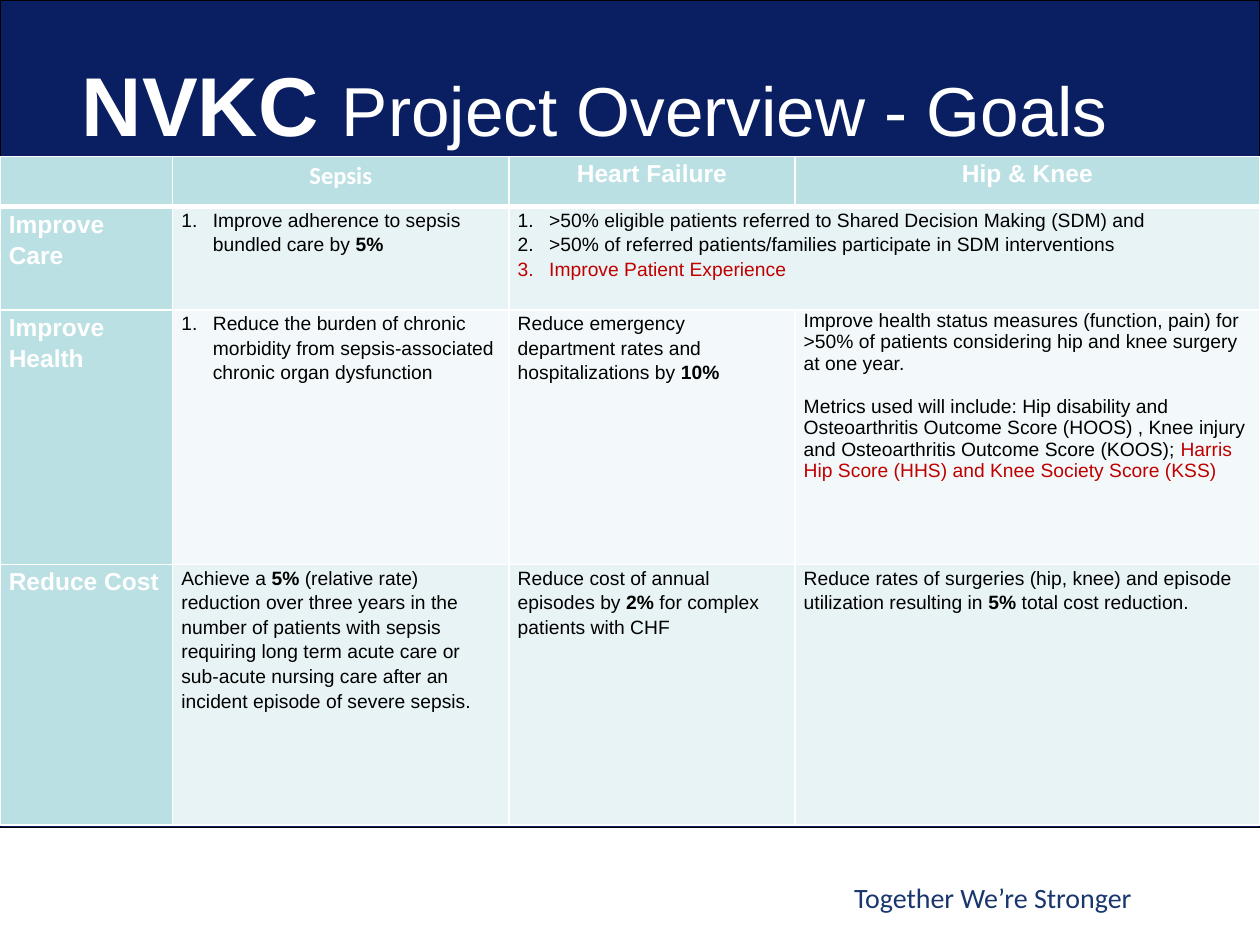
from lxml import etree
from pptx import Presentation
from pptx.dml.color import RGBColor
from pptx.enum.shapes import MSO_SHAPE
from pptx.enum.text import MSO_ANCHOR, MSO_AUTO_SIZE, PP_ALIGN
from pptx.oxml.ns import qn
from pptx.util import Inches, Pt

LEFT, CENTER, RIGHT = PP_ALIGN.LEFT, PP_ALIGN.CENTER, PP_ALIGN.RIGHT
RECTANGLE = MSO_SHAPE.RECTANGLE
MIDDLE, TOP = MSO_ANCHOR.MIDDLE, MSO_ANCHOR.TOP
NO_AUTOFIT = MSO_AUTO_SIZE.NONE
TITLE_ONLY = 5

COLORS = {"navy": "0A1F62", "motto": "19376E", "white": "FFFFFF",
          "black": "000000", "red": "C00000", "heading": "BBE0E3",
          "band": "E7F3F4", "light": "F3F9FA"}

COLUMN_WIDTHS = [1.37, 2.67, 2.27, 3.69]
ROW_HEIGHTS = [0.4, 0.82, 2.02, 2.07]
ROW_FILLS = ["heading", "band", "light", "band"]
TOPICS = ["", "Sepsis", "Heart Failure", "Hip & Knee"]
AIMS = ["Improve Care", "Improve Health", "Reduce Cost"]

# Each goal is a list of paragraphs; *bold* and ^red^ mark runs
GOALS = {
    (1, 1): ["Improve adherence to sepsis bundled care by *5%*"],
    (1, 2): [">50% eligible patients referred to Shared Decision Making (SDM) and",
             ">50% of referred patients/families participate in SDM interventions",
             "^Improve Patient Experience^"],
    (2, 1): ["Reduce the burden of chronic morbidity from sepsis-associated "
             "chronic organ dysfunction"],
    (2, 2): ["Reduce emergency department rates and hospitalizations by *10%*"],
    (2, 3): ["Improve health status measures (function, pain) for >50% of patients "
             "considering hip and knee surgery at one year.",
             "Metrics used will include: Hip disability and Osteoarthritis Outcome "
             "Score (HOOS) , Knee injury and Osteoarthritis Outcome Score (KOOS); "
             "^Harris Hip Score (HHS) and Knee Society Score (KSS)^"],
    (3, 1): ["Achieve a *5%* (relative rate) reduction over three years in the number "
             "of patients with sepsis requiring long term acute care or sub-acute "
             "nursing care after an incident episode of severe sepsis."],
    (3, 2): ["Reduce cost of annual episodes by *2%* for complex patients with CHF"],
    (3, 3): ["Reduce rates of surgeries (hip, knee) and episode utilization "
             "resulting in *5%* total cost reduction."],
}
NUMBERED = {(1, 1), (1, 2), (2, 1)}
SINGLE_SPACED = {(2, 3)}


def rgb(name):
    return RGBColor.from_string(COLORS[name])


class GoalsSlide:
    def __init__(self, presentation):
        self.slide = presentation.slides.add_slide(presentation.slide_layouts[TITLE_ONLY])

    def style(self, paragraph, size, color, bold=False, face="Arial", align=LEFT):
        paragraph.alignment = align
        font = paragraph.font
        font.name, font.size, font.bold = face, Pt(size), bold
        font.color.rgb = rgb(color)

    def backdrop(self, left, top, width, height):
        panel = self.slide.shapes.add_shape(
            RECTANGLE, Inches(left), Inches(top), Inches(width), Inches(height))
        panel.shadow.inherit = False
        panel.fill.solid()
        panel.fill.fore_color.rgb = rgb("navy")
        panel.line.color.rgb = rgb("black")
        panel.line.width = Pt(0.75)

    def title(self, left, top, width, height, parts):
        title = self.slide.shapes.title
        title.left, title.top = Inches(left), Inches(top)
        title.width, title.height = Inches(width), Inches(height)
        frame = title.text_frame
        frame.auto_size, frame.vertical_anchor = NO_AUTOFIT, MIDDLE
        paragraph = frame.paragraphs[0]
        self.style(paragraph, 39.6, "white")
        for text, size, bold in parts:
            run = paragraph.add_run()
            run.text, run.font.size, run.font.bold = text, Pt(size), bold
        # Bring the title in front of the backdrop
        self.slide.shapes._spTree.append(title._element)

    def motto(self, left, top, width, height, text):
        box = self.slide.shapes.add_textbox(
            Inches(left), Inches(top), Inches(width), Inches(height))
        box.text_frame.word_wrap = True
        paragraph = box.text_frame.paragraphs[0]
        paragraph.text = text
        self.style(paragraph, 16, "motto", face="Calibri", align=RIGHT)

    def table(self, left, top, widths, heights):
        table = self.slide.shapes.add_table(
            len(heights), len(widths), Inches(left), Inches(top),
            Inches(sum(widths)), Inches(sum(heights))).table
        table.first_row = table.horz_banding = False
        for column, width in zip(table.columns, widths):
            column.width = Inches(width)
        for row, height in zip(table.rows, heights):
            row.height = Inches(height)
        return table

    def cell(self, cell, fill, top_line=1, bottom_line=1):
        cell.margin_left = cell.margin_right = Inches(0.07)
        cell.margin_top = cell.margin_bottom = 0
        cell.vertical_anchor = TOP
        properties = cell._tc.get_or_add_tcPr()
        edges = {"lnL": 1, "lnR": 1, "lnT": top_line, "lnB": bottom_line}
        for edge, width in edges.items():
            line = etree.SubElement(properties, qn(f"a:{edge}"), w=str(Pt(width)))
            paint = etree.SubElement(line, qn("a:solidFill"))
            etree.SubElement(paint, qn("a:srgbClr"), val=COLORS["white"])
        cell.fill.solid()
        cell.fill.fore_color.rgb = rgb(fill)

    def heading(self, cell, text, face="Arial", align=LEFT):
        paragraph = cell.text_frame.paragraphs[0]
        paragraph.text = text
        paragraph.line_spacing = 1.15
        self.style(paragraph, 14, "white", True, face, align)

    def goal(self, cell, texts, numbered, spacing):
        frame = cell.text_frame
        for index, text in enumerate(texts):
            paragraph = frame.add_paragraph() if index else frame.paragraphs[0]
            paragraph.line_spacing = spacing
            if numbered:
                self.number(paragraph)
            elif index:
                paragraph.space_before = Pt(12.5)
            self.style(paragraph, 11, "red" if text.startswith("^") else "black")
            self.marked_runs(paragraph, text)

    def number(self, paragraph):
        properties = paragraph._p.get_or_add_pPr()
        properties.set("marL", str(Inches(0.25)))
        properties.set("indent", str(Inches(-0.25)))
        etree.SubElement(properties, qn("a:buFont"), typeface="+mj-lt")
        etree.SubElement(properties, qn("a:buAutoNum"), type="arabicPeriod")

    def marked_runs(self, paragraph, text):
        for i, stretch in enumerate(text.split("*")):
            for j, piece in enumerate(stretch.split("^")):
                if not piece:
                    continue
                run = paragraph.add_run()
                run.text = piece
                if i % 2:
                    run.font.bold = True
                if j % 2:
                    run.font.color.rgb = rgb("red")


def main():
    presentation = Presentation()
    presentation.slide_width, presentation.slide_height = Inches(10), Inches(7.5)
    page = GoalsSlide(presentation)

    # Backdrop, title and motto
    page.backdrop(0, 0, 10, 6.57)
    page.title(0.55, 0.42, 8.5, 0.8,
               [("NVKC ", 47.7, True), ("Project Overview - Goals", 39.6, False)])
    page.motto(6.12, 6.94, 2.96, 0.37, "Together We’re Stronger")

    # Table grid
    table = page.table(0, 1.24, COLUMN_WIDTHS, ROW_HEIGHTS)
    for row, fill in enumerate(ROW_FILLS):
        for column in range(len(COLUMN_WIDTHS)):
            page.cell(table.cell(row, column), fill if column else "heading",
                      top_line=3 if row == 1 else 1, bottom_line=1 if row else 3)
    table.cell(1, 2).merge(table.cell(1, 3))

    # Topics, aims and goals
    for column, topic in enumerate(TOPICS):
        face = "Calibri" if topic == "Sepsis" else "Arial"
        page.heading(table.cell(0, column), topic, face, CENTER)
    for row, aim in enumerate(AIMS, start=1):
        page.heading(table.cell(row, 0), aim)
    for place, texts in GOALS.items():
        page.goal(table.cell(*place), texts, place in NUMBERED,
                  1.0 if place in SINGLE_SPACED else 1.15)

    presentation.save("out.pptx")


if __name__ == "__main__":
    main()
